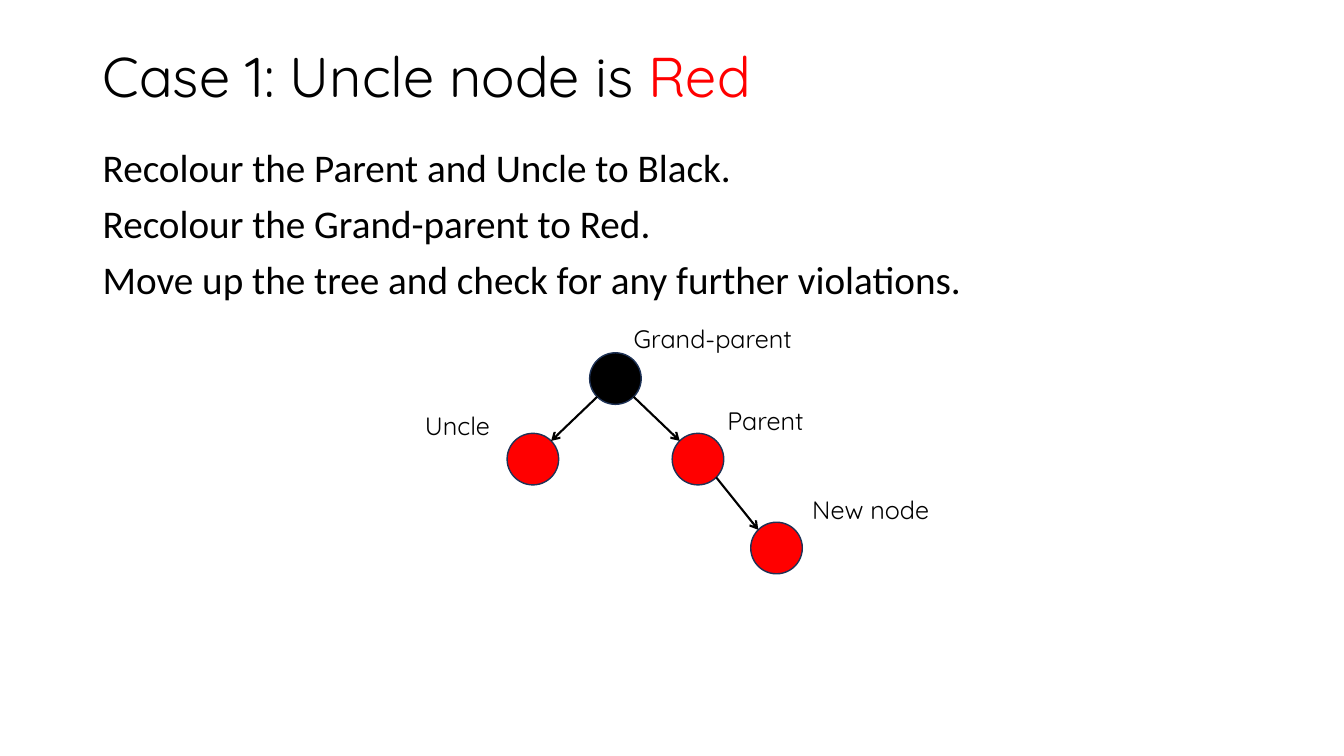
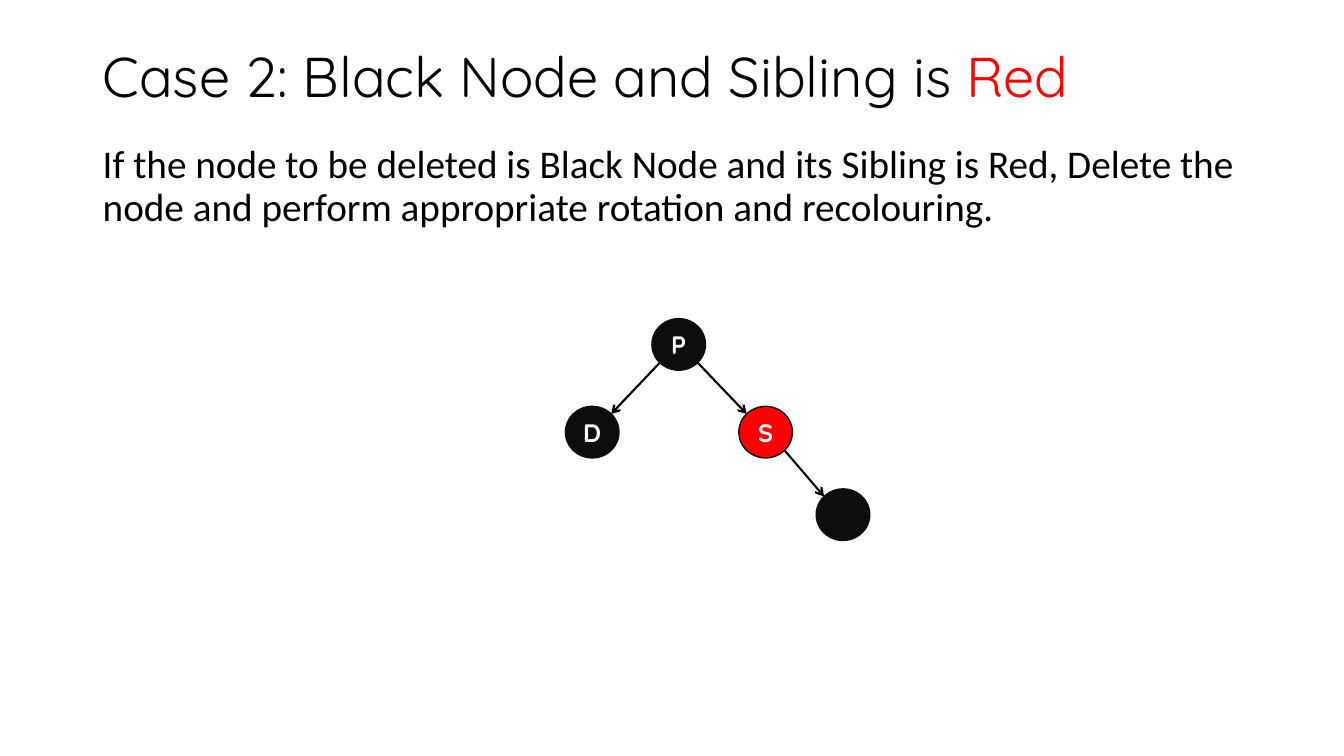
from dataclasses import dataclass
from math import sqrt

from lxml.etree import SubElement
from pptx import Presentation
from pptx.dml.color import RGBColor
from pptx.enum.shapes import MSO_CONNECTOR, MSO_SHAPE
from pptx.enum.text import MSO_ANCHOR, PP_ALIGN
from pptx.oxml.ns import qn
from pptx.shapes.autoshape import Shape
from pptx.slide import Slide
from pptx.text.text import TextFrame
from pptx.util import Cm, Pt

COLORS = {
    "black": "000000",
    "dark": "0D0D0D",
    "red": "FF0000",
    "navy": "1E3256",
    "white": "FFFFFF",
}
HEAD_FONT = "Quicksand"
BODY_FONT = "Calibri"
LEFT, WIDTH = 2.34, 29.21
NODE_HIGH = 1.3


@dataclass
class Node:
    """Tree node; left and top are in centimetres."""
    left: float
    top: float
    fill: str
    text: str = ""


@dataclass
class Label:
    text: str
    left: float
    top: float
    width: float


@dataclass
class Tree:
    """Nodes, with edges as pairs of parent and child names."""
    node_wide: float
    line: str
    nodes: dict[str, Node]
    edges: list[tuple[str, str]]
    labels: list[Label]


@dataclass
class Case:
    title: str
    accent: str
    body_top: float
    body: list[str]
    tree: Tree


CASES = [
    Case(
        "Case 1: Uncle node is ", "Red", 3.61,
        ["Recolour the Parent and Uncle to Black.",
         "Recolour the Grand-parent to Red.",
         "Move up the tree and check for any further violations."],
        Tree(
            1.3, "navy",
            {"grand": Node(14.86, 8.89, "black"),
             "uncle": Node(12.78, 10.92, "red"),
             "parent": Node(16.94, 10.92, "red"),
             "new": Node(18.92, 13.16, "red")},
            [("grand", "uncle"), ("grand", "parent"), ("parent", "new")],
            [Label("Parent", 18.08, 10.08, 4.04),
             Label("Uncle", 10.46, 10.21, 3.35),
             Label("Grand-parent", 15.72, 8.03, 5.21),
             Label("New node", 20.22, 12.32, 4.04)],
        ),
    ),
    Case(
        "Case 2: Black Node and Sibling is ", "Red", 3.53,
        ["If the node to be deleted is Black Node and its Sibling is Red, "
         "Delete the node and perform appropriate rotation and recolouring."],
        Tree(
            1.35, "dark",
            {"parent": Node(16.43, 8.03, "dark", "P"),
             "sibling": Node(18.62, 10.24, "red", "S"),
             "deleted": Node(14.25, 10.24, "dark", "D"),
             "child": Node(20.57, 12.32, "dark")},
            [("parent", "deleted"), ("parent", "sibling"),
             ("sibling", "child")],
            [],
        ),
    ),
]


def color(name: str) -> RGBColor:
    return RGBColor.from_string(COLORS[name])


def style(frame: TextFrame, size: float, face: str, tint: str = "black",
          bold: bool = False) -> None:
    """Format every run in the frame."""
    for para in frame.paragraphs:
        for run in para.runs:
            font = run.font
            font.size, font.name, font.bold = Pt(size), face, bold
            font.color.rgb = color(tint)


def add_box(slide: Slide, left: float, top: float, width: float,
            height: float, text: str) -> TextFrame:
    box = slide.shapes.add_textbox(Cm(left), Cm(top), Cm(width), Cm(height))
    frame = box.text_frame
    frame.word_wrap = True
    frame.text = text
    return frame


def add_title(slide: Slide, text: str, accent: str) -> None:
    frame = add_box(slide, LEFT, 1.02, WIDTH, 1.96, text)
    frame.vertical_anchor = MSO_ANCHOR.MIDDLE
    para = frame.paragraphs[0]
    para.line_spacing = 0.9
    run = para.add_run()
    run.text = accent
    style(frame, 40, HEAD_FONT)
    run.font.color.rgb = color("red")


def add_body(slide: Slide, top: float, lines: list[str]) -> None:
    frame = add_box(slide, LEFT, top, WIDTH, 13.6, "\n".join(lines))
    for index, para in enumerate(frame.paragraphs):
        para.line_spacing = 0.9
        if index:
            para.space_before = Pt(10)
    style(frame, 28, BODY_FONT)


def add_node(slide: Slide, node: Node, width: float, line: str) -> Shape:
    shape = slide.shapes.add_shape(
        MSO_SHAPE.OVAL, Cm(node.left), Cm(node.top), Cm(width), Cm(NODE_HIGH))
    shape.shadow.inherit = False
    shape.fill.solid()
    shape.fill.fore_color.rgb = color(node.fill)
    shape.line.color.rgb = color(line)
    shape.line.width = Pt(1)
    if node.text:
        frame = shape.text_frame
        frame.margin_left = frame.margin_right = 0
        frame.margin_top = frame.margin_bottom = 0
        frame.vertical_anchor = MSO_ANCHOR.MIDDLE
        frame.word_wrap = False
        frame.text = node.text
        frame.paragraphs[0].alignment = PP_ALIGN.CENTER
        style(frame, 18, HEAD_FONT, "white", bold=True)
    return shape


def rim(shape: Shape, side: int, down: int) -> tuple[int, int]:
    """Point on the diagonal of an oval; side and down are 1 or -1."""
    across = shape.width / 2 * (1 + side / sqrt(2))
    below = shape.height / 2 * (1 + down / sqrt(2))
    return round(shape.left + across), round(shape.top + below)


def add_edge(slide: Slide, start: Shape, end: Shape) -> None:
    side = 1 if end.left > start.left else -1
    edge = slide.shapes.add_connector(
        MSO_CONNECTOR.STRAIGHT, *rim(start, side, 1), *rim(end, -side, -1))
    edge.line.color.rgb = color("black")
    edge.line.width = Pt(1.5)
    SubElement(edge.line._get_or_add_ln(), qn("a:tailEnd"), type="arrow")
    SubElement(edge._element.spPr, qn("a:effectLst"))


def add_tree(slide: Slide, tree: Tree) -> None:
    ovals = {name: add_node(slide, node, tree.node_wide, tree.line)
             for name, node in tree.nodes.items()}
    for start, end in tree.edges:
        add_edge(slide, ovals[start], ovals[end])
    for label in tree.labels:
        frame = add_box(slide, label.left, label.top, label.width, 1.02,
                        label.text)
        style(frame, 18, HEAD_FONT)


def main() -> None:
    deck = Presentation()
    deck.slide_width, deck.slide_height = Cm(33.87), Cm(19.05)
    for case in CASES:
        slide = deck.slides.add_slide(deck.slide_layouts[6])
        add_title(slide, case.title, case.accent)
        add_body(slide, case.body_top, case.body)
        add_tree(slide, case.tree)
    deck.save("out.pptx")


if __name__ == "__main__":
    main()
